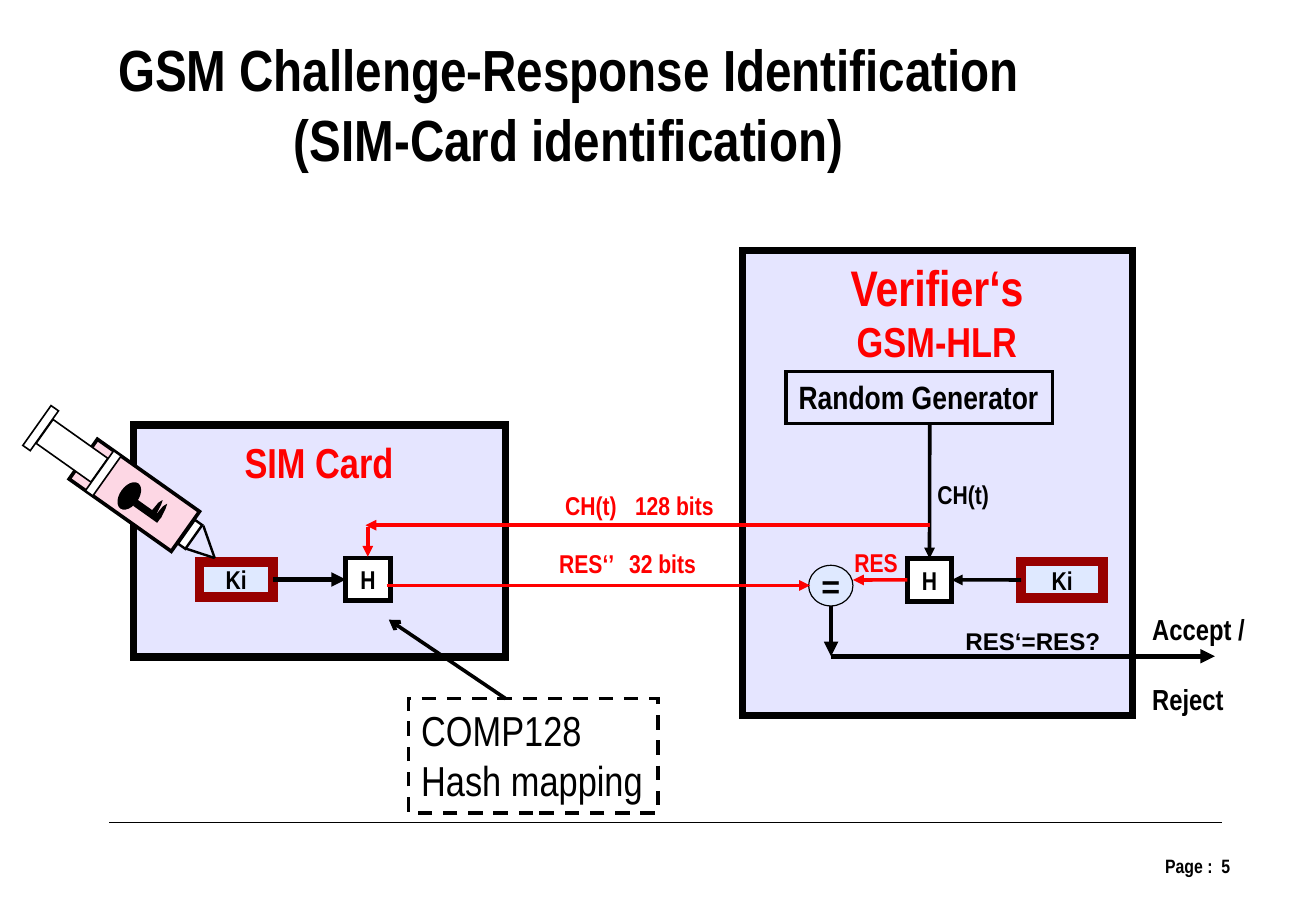
from lxml.etree import SubElement
from pptx import Presentation
from pptx.dml.color import RGBColor
from pptx.enum.dml import MSO_LINE
from pptx.enum.shapes import MSO_CONNECTOR, MSO_SHAPE
from pptx.enum.text import MSO_ANCHOR, MSO_AUTO_SIZE, PP_ALIGN
from pptx.oxml.ns import qn
from pptx.util import Cm, Pt

COLORS = {"black": "000000", "red": "FF0000", "white": "FFFFFF", "panel": "E5E5FF",
          "key": "DFE9FF", "maroon": "980000", "pink": "FDD7E4"}
TOP, LEFT, BOTTOM, RIGHT = range(4)
TILT = 215.3
CM_PER_INCH = 2.54


def color(name):
    return RGBColor.from_string(COLORS[name])


def write(shape, text, size, ink="black", align=PP_ALIGN.LEFT, anchor=MSO_ANCHOR.TOP,
          wrap=False, font="Arial Narrow", bold=True, inset=0.25):
    frame = shape.text_frame
    frame_format = {"word_wrap": wrap, "auto_size": MSO_AUTO_SIZE.NONE,
                    "vertical_anchor": anchor, "margin_left": Cm(inset),
                    "margin_right": Cm(inset), "margin_top": Cm(0.13),
                    "margin_bottom": Cm(0.13)}
    for name, value in frame_format.items():
        setattr(frame, name, value)
    frame.text = text
    font_format = {"name": font, "size": Pt(size), "bold": bold}
    for para in frame.paragraphs:
        para.alignment = align
        for span in para.runs:
            for name, value in font_format.items():
                setattr(span.font, name, value)
            span.font.color.rgb = color(ink)
    return frame


def add_label(page, box, text, size, **style):
    shape = page.shapes.add_textbox(*map(Cm, box))
    return write(shape, text, size, **style)


def paint(shape, fill, weight, line="black"):
    shape.shadow.inherit = False
    if fill:
        shape.fill.solid()
        shape.fill.fore_color.rgb = color(fill)
    else:
        shape.fill.background()
    shape.line.color.rgb = color(line)
    shape.line.width = Pt(weight)
    SubElement(shape.line._get_or_add_ln(), qn("a:miter"), lim="800000")
    return shape


def add_block(page, box, fill, weight, line="black", kind=MSO_SHAPE.RECTANGLE):
    return paint(page.shapes.add_shape(kind, *map(Cm, box)), fill, weight, line)


def add_line(page, start, end, weight, ink="black", head=None):
    line = page.shapes.add_connector(MSO_CONNECTOR.STRAIGHT, *map(Cm, (*start, *end)))
    line.line.color.rgb = color(ink)
    line.line.width = Pt(weight)
    if head:
        SubElement(line.line._get_or_add_ln(), qn("a:tailEnd"), type=head)
    SubElement(line._element.spPr, qn("a:effectLst"))
    return line


def add_node(page, box, text, fill, weight, line="black", size=16, font="Arial Narrow",
             kind=MSO_SHAPE.RECTANGLE):
    node = add_block(page, box, fill, weight, line, kind)
    write(node, text, size, font=font, align=PP_ALIGN.CENTER, anchor=MSO_ANCHOR.MIDDLE)
    return node


def add_hash_node(page, x, y):
    return add_node(page, (x, y, 0.97, 0.94), "H", "white", 3)


def add_key_node(page, box):
    return add_node(page, box, "Ki", "key", 6, "maroon")


def draw_title(page, box):
    title = page.shapes.title
    title.left, title.top, title.width, title.height = map(Cm, box)
    write(title, "GSM Challenge-Response Identification\n(SIM-Card identification)", 36,
          align=PP_ALIGN.CENTER)


def draw_footer(page, box):
    x, y, width, height = box
    add_line(page, (x, y), (x + width, y), 0.75)
    add_label(page, (x + width - 6.07, y + 0.55, 6.55, height - 0.55), "Page :  5", 12,
              align=PP_ALIGN.RIGHT, wrap=True, inset=0.3)


def draw_sim_card(page, box):
    x, y = box[:2]
    add_block(page, box, "panel", 4.5)
    add_label(page, (x + 2.16, y + 0.13, 3.81, 1.37), "SIM Card", 26, ink="red",
              align=PP_ALIGN.CENTER)
    key = add_key_node(page, (x + 1.45, y + 3, 1.6, 0.76))
    hash_node = add_hash_node(page, x + 4.65, y + 2.91)
    arrow = add_line(page, (x + 3.05, y + 3.38), (x + 4.65, y + 3.38), 3, head="triangle")
    arrow.begin_connect(key, RIGHT)
    arrow.end_connect(hash_node, LEFT)


def draw_verifier(page, box):
    x, y = box[:2]
    middle = y + 7.22
    add_block(page, box, "panel", 4.5)
    heading = add_label(page, (x + 2.08, y, 4.34, 2.69), "Verifier‘s\nGSM-HLR", 31,
                        ink="red", align=PP_ALIGN.CENTER)
    heading.paragraphs[1].runs[0].font.size = Pt(26)

    # Random challenge
    generator = add_block(page, (x + 0.94, y + 2.66, 5.84, 1.14), None, 2.25)
    write(generator, "Random Generator", 20, inset=0.28)
    add_label(page, (x + 4.03, y + 4.88, 1.8, 0.91), "CH(t)", 16, wrap=True, inset=0.23)

    # Key, hash and expected response
    hash_node = add_hash_node(page, x + 3.6, middle - 0.47)
    key = add_key_node(page, (x + 6.09, middle - 0.4, 1.8, 0.8))
    challenge = add_line(page, (x + 4.09, y + 3.8), (x + 4.09, y + 6.75), 2.25,
                         head="triangle")
    challenge.end_connect(hash_node, TOP)
    key_arrow = add_line(page, (x + 6.09, middle), (x + 4.57, middle), 2.25, head="triangle")
    key_arrow.begin_connect(key, LEFT)
    key_arrow.end_connect(hash_node, RIGHT)
    result = add_line(page, (x + 3.6, middle), (x + 2.41, middle), 2.25, "red", "triangle")
    result.begin_connect(hash_node, LEFT)
    add_label(page, (x + 2.21, y + 6.37, 1.93, 0.91), "RES", 16, ink="red", wrap=True,
              inset=0.23)

    # Comparison and decision
    add_node(page, (x + 1.44, y + 6.9, 0.97, 0.89), "=", "key", 0.75, size=20,
             font="Arial", kind=MSO_SHAPE.OVAL)
    corner = (x + 1.93, y + 8.89)
    add_line(page, (x + 1.93, y + 7.8), corner, 3, head="triangle")
    add_line(page, corner, (x + 10.33, y + 8.89), 3, head="triangle")
    decision = add_label(page, (x + 8.68, y + 7.79, 2.62, 2.59), "Accept /\nReject", 18,
                         inset=0.28)
    decision.paragraphs[1].space_before = Pt(21.5)
    add_label(page, (x + 4.59, y + 8.1, 3.56, 0.91), "RES‘=RES?", 15, font="Arial",
              inset=0.28)


def draw_messages(page, box):
    x, y, width, height = box
    labels = [((x + 4.14, y, 4.09, 0.91), "CH(t)\t128 bits"),
              ((x + 4.01, y + 1.27, 4.8, 0.91), "RES‘’\t32 bits")]
    for place, text in labels:
        frame = add_label(page, place, text, 16, ink="red", wrap=True, inset=0.23)
        stops = SubElement(frame.paragraphs[0]._p.get_or_add_pPr(), qn("a:tabLst"))
        SubElement(stops, qn("a:tab"), pos=str(Cm(1.53)), algn="l")
    arrows = [((x + width, y + 0.91), (x, y + 0.91)),
              ((x + 0.05, y + 0.96), (x + 0.05, y + 1.6)),
              ((x + 0.46, y + height), (x + 9.73, y + height))]
    for start, end in arrows:
        add_line(page, start, end, 2.25, "red", "triangle")


def draw_syringe(page, box):
    x, y = box[:2]

    def add_part(place, fill, weight, kind=MSO_SHAPE.RECTANGLE):
        left, top, width, height = place
        part = add_block(page, (x + left, y + top, width, height), fill, weight, kind=kind)
        part.rotation = TILT

    add_part((0.93, 1.67, 2.74, 1.07), "pink", 2.25)

    # Key symbol on the barrel
    add_part((2, 1.9, 0.38, 0.64), "black", 1, MSO_SHAPE.OVAL)
    add_part((2.28, 2.49, 0.61, 0.13), "black", 1)
    tooth = [(2.87, 2.69), (2.79, 2.64), (2.94, 2.46), (2.99, 2.43), (2.97, 2.49)]
    for shift_x, shift_y in [(0, 0), (-0.1, -0.08)]:
        points = [(Cm(x + left + shift_x), Cm(y + top + shift_y)) for left, top in tooth]
        outline = page.shapes.build_freeform(*points[0])
        outline.add_line_segments(points[1:])
        paint(outline.convert_to_shape(), "black", 1)

    # Neck, plunger, grip and collar
    add_part((3.42, 2.74, 0.2, 0.64), "white", 1.5)
    add_part((0.2, 0.91, 1.47, 0.64), "white", 1)
    for left, top in [(0.15, 0.2), (1.52, 1.19)]:
        add_part((left, top, 0.2, 1.07), "white", 1)

    # Needle
    for left, top in [(3.42, 3.37), (3.81, 2.87)]:
        add_line(page, (x + left, y + top), (x + 4.06, y + 3.58), 1.5)


def draw_hash_note(page, box):
    x, y = box[:2]
    note = add_block(page, box, None, 2.25)
    note.line.dash_style = MSO_LINE.DASH
    write(note, "COMP128\nHash mapping", 26, bold=False, inset=0.28)
    add_line(page, (x + 2.13, y), (x - 0.43, y - 1.73), 2.25, head="arrow")


def main():
    deck = Presentation()
    deck.slide_width = Cm(11.34 * CM_PER_INCH)
    deck.slide_height = Cm(7.88 * CM_PER_INCH)
    page = deck.slides.add_slide(deck.slide_layouts[5])
    draw_footer(page, (2.39, 18.02, 24.36, 1.9))
    draw_verifier(page, (16.26, 5.48, 8.53, 10.19))
    draw_sim_card(page, (2.92, 9.31, 8.15, 5.08))
    draw_title(page, (2.24, 0.61, 20.42, 3.33))
    draw_messages(page, (8, 10.59, 12.35, 2.23))
    draw_syringe(page, (0.64, 8.64, 4.06, 3.58))
    draw_hash_note(page, (8.94, 15.3, 5.46, 2.51))
    deck.save("out.pptx")


if __name__ == "__main__":
    main()
